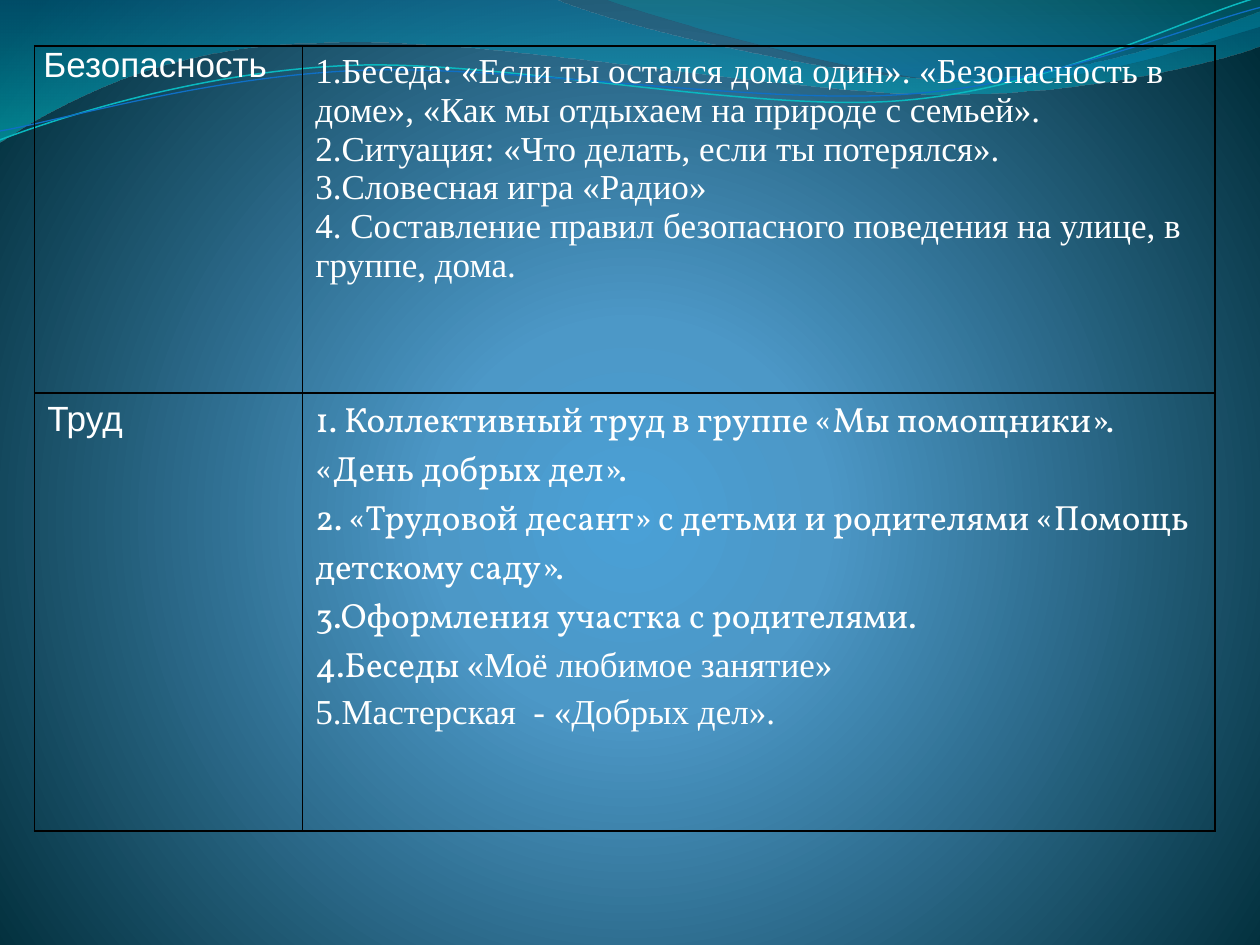
import math
from dataclasses import dataclass

import pptx
import pptx.dml.color
import pptx.enum.text
import pptx.oxml
import pptx.oxml.ns
import pptx.util

Pt = pptx.util.Pt
qn = pptx.oxml.ns.qn
NS = pptx.oxml.ns.nsdecls("a")
COLORS = {
    "text": "FFFFFF", "border": "000000",
    "glow": "4AA0D6", "mid": "4C98C7", "edge": "002C38",
    "wave_blue": "0074A1", "wave_cyan": "00C6CF",
    "crest_teal": "00A1A9", "crest_blue": "008BBF",
    "line_cyan": "0AB8BF", "line_blue": "0F6FC6",
}
SANS, SERIF, BOOK = "Arial", "Times New Roman", "Vollkorn"
LINEAR = '<a:lin ang="5400000" scaled="0"/>'
RADIAL = ('<a:path path="circle"><a:fillToRect l="10000" t="110000" '
          'r="10000" b="100000"/></a:path>')
WAVE_TILT = -2.7


@dataclass
class Stop:
    position: int
    color: str
    alpha: int = 100


@dataclass
class Band:
    outline: list
    stops: list


@dataclass
class WaveLine:
    outline: list
    center: tuple
    color: str
    width: float


@dataclass
class Para:
    runs: list
    fonts: list


@dataclass
class Cell:
    paras: list
    margins: tuple = (7.2, 3.6)
    align: object = None


BANDS = [
    Band([(0, -0.7), (316.8, -0.7),
          (342.7, 12.2, 478.1, 45.4, 545.8, 45.4),
          (614.2, 45.4, 689.8, 18.7, 720, 6.5), (720.7, 25.9),
          (707.8, 31.7, 626.4, 54.7, 537.1, 54),
          (447.8, 54, 275, 20.2, 185, 24.5),
          (92.9, 25.2, 33.1, 59.8, -0.7, 81.4), (0, -0.7)],
         [Stop(0, "wave_blue", 45), Stop(100, "wave_cyan", 55)]),
    Band([(344.9, -0.7), (366.5, 7.9, 491, 44.6, 553.7, 46.8),
          (616.3, 49.7, 691.9, 23, 720, 15.1), (720, 0), (344.9, -0.7)],
         [Stop(0, "crest_teal", 30), Stop(80, "crest_blue", 45)]),
]
WAVE_LINES = [
    WaveLine([(0, 79.9), (34.6, 67, 113.8, 41, 199.4, 37.4),
              (284.4, 33.8, 427, 64.1, 513.4, 57.6),
              (599.8, 51.1, 675.4, 10.8, 718.6, -1.4)],
             (359.3, 41.4), "line_cyan", 0.85),
    WaveLine([(0, 74.9), (33.8, 69.1, 118.1, 43.9, 203.8, 40.3),
              (290.2, 36.7, 429.8, 59.8, 516.2, 54),
              (601.9, 48.2, 677.5, 15.1, 720, 4.3)],
             (359.6, 42.5), "line_blue", 0.75),
]
COLUMNS = [153.2, 521.4]
ROWS = [198.5, 250.2]
CELLS = [
    [Cell([Para(["Безопасность"], [SANS])], (5, 0),
          pptx.enum.text.PP_ALIGN.JUSTIFY),
     Cell([Para([t], [SERIF]) for t in (
         "1.Беседа: «Если ты остался дома один». «Безопасность в доме», "
         "«Как мы отдыхаем на природе с семьей».",
         "2.Ситуация: «Что делать, если ты потерялся».",
         "3.Словесная игра «Радио»",
         "4. Составление правил безопасного поведения на улице, в группе, дома.")])],
    [Cell([Para(["Труд"], [SANS])]),
     Cell([Para([t], [BOOK]) for t in (
         "1. Коллективный труд в группе «Мы помощники». «День добрых дел».",
         "2. «Трудовой десант» с детьми и родителями «Помощь детскому саду».",
         "3.Оформления участка с родителями.")] + [
         Para(["4.Беседы ", "«Моё любимое занятие»"], [BOOK, SERIF]),
         Para(["5.Мастерская  - «Добрых дел»."], [SERIF])])],
]


def rgb(name: str) -> pptx.dml.color.RGBColor:
    return pptx.dml.color.RGBColor.from_string(COLORS[name])


def set_gradient(parent, stops: list, shade: str) -> None:
    gs = "".join(
        f'<a:gs pos="{st.position * 1000}"><a:srgbClr val="{COLORS[st.color]}">'
        f'<a:alpha val="{st.alpha * 1000}"/></a:srgbClr></a:gs>' for st in stops)
    grad = pptx.oxml.parse_xml(
        f'<a:gradFill {NS} rotWithShape="1"><a:gsLst>{gs}</a:gsLst>{shade}</a:gradFill>')
    parent.replace(parent.find(qn("a:noFill")), grad)


def rotate(seg: tuple, center: tuple, degrees: float) -> tuple:
    cx, cy = center
    cos, sin = math.cos(math.radians(degrees)), math.sin(math.radians(degrees))
    turned = []
    for x, y in zip(seg[::2], seg[1::2]):
        turned += [cx + (x - cx) * cos - (y - cy) * sin,
                   cy + (x - cx) * sin + (y - cy) * cos]
    return tuple(turned)


def add_outline(slide, outline: list, close: bool):
    pts = [(Pt(x), Pt(y)) for seg in outline for x, y in zip(seg[::2], seg[1::2])]
    builder = slide.shapes.build_freeform(*pts[0])
    builder.add_line_segments(pts[1:], close=close)
    s = builder.convert_to_shape()
    s.shadow.inherit = False
    s.fill.background()
    lines = iter(list(s._element.iter(qn("a:lnTo"))))
    for seg in outline[1:]:
        parts = [next(lines) for _ in range(len(seg) // 2)]
        if len(parts) == 3:
            curve = pptx.oxml.parse_xml(f"<a:cubicBezTo {NS}/>")
            parts[0].addprevious(curve)
            for part in parts:
                curve.append(part[0])
                part.getparent().remove(part)
    return s


def add_band(slide, band: Band) -> None:
    s = add_outline(slide, band.outline, True)
    s.line.fill.background()
    set_gradient(s._element.spPr, band.stops, LINEAR)


def add_wave_line(slide, wave: WaveLine) -> None:
    level = [rotate(seg, wave.center, -WAVE_TILT) for seg in wave.outline]
    s = add_outline(slide, level, False)
    s.rotation = WAVE_TILT
    s.line.color.rgb = rgb(wave.color)
    s.line.width = Pt(wave.width)


def fill_cell(target, cell: Cell) -> None:
    target.margin_left = target.margin_right = Pt(cell.margins[0])
    target.margin_top = target.margin_bottom = Pt(cell.margins[1])
    tf = target.text_frame
    for i, para in enumerate(cell.paras):
        p = tf.add_paragraph() if i else tf.paragraphs[0]
        p.alignment = cell.align
        p.font.size = Pt(20)
        p.font.color.rgb = rgb("text")
        if len(para.fonts) == 1:
            p.font.name = para.fonts[0]
        for text, font in zip(para.runs, para.fonts):
            r = p.add_run()
            r.text = text
            if len(para.fonts) > 1:
                r.font.name = font
    target.fill.background()
    tc_pr = target._tc.get_or_add_tcPr()
    for i, side in enumerate(("lnL", "lnR", "lnT", "lnB")):
        tc_pr.insert(i, pptx.oxml.parse_xml(
            f'<a:{side} {NS} w="{Pt(1)}"><a:solidFill><a:srgbClr '
            f'val="{COLORS["border"]}"/></a:solidFill></a:{side}>'))


def add_plan_table(slide) -> None:
    table = slide.shapes.add_table(
        len(ROWS), len(COLUMNS), Pt(19.8), Pt(26.2),
        Pt(sum(COLUMNS)), Pt(sum(ROWS))).table
    table.first_row = table.horz_banding = False
    for column, width in zip(table.columns, COLUMNS):
        column.width = Pt(width)
    for i, height in enumerate(ROWS):
        table.rows[i].height = Pt(height)
        for j, cell in enumerate(CELLS[i]):
            fill_cell(table.cell(i, j), cell)


def main() -> None:
    prs = pptx.Presentation()
    prs.slide_width, prs.slide_height = Pt(720), Pt(540)
    slide = prs.slides.add_slide(prs.slide_layouts[6])
    slide.background.fill.background()
    set_gradient(slide._element.find(".//" + qn("p:bgPr")),
                 [Stop(0, "glow"), Stop(25, "mid"), Stop(100, "edge")], RADIAL)
    for band in BANDS:
        add_band(slide, band)
    for wave in WAVE_LINES:
        add_wave_line(slide, wave)
    add_plan_table(slide)
    prs.save("out.pptx")


if __name__ == "__main__":
    main()
